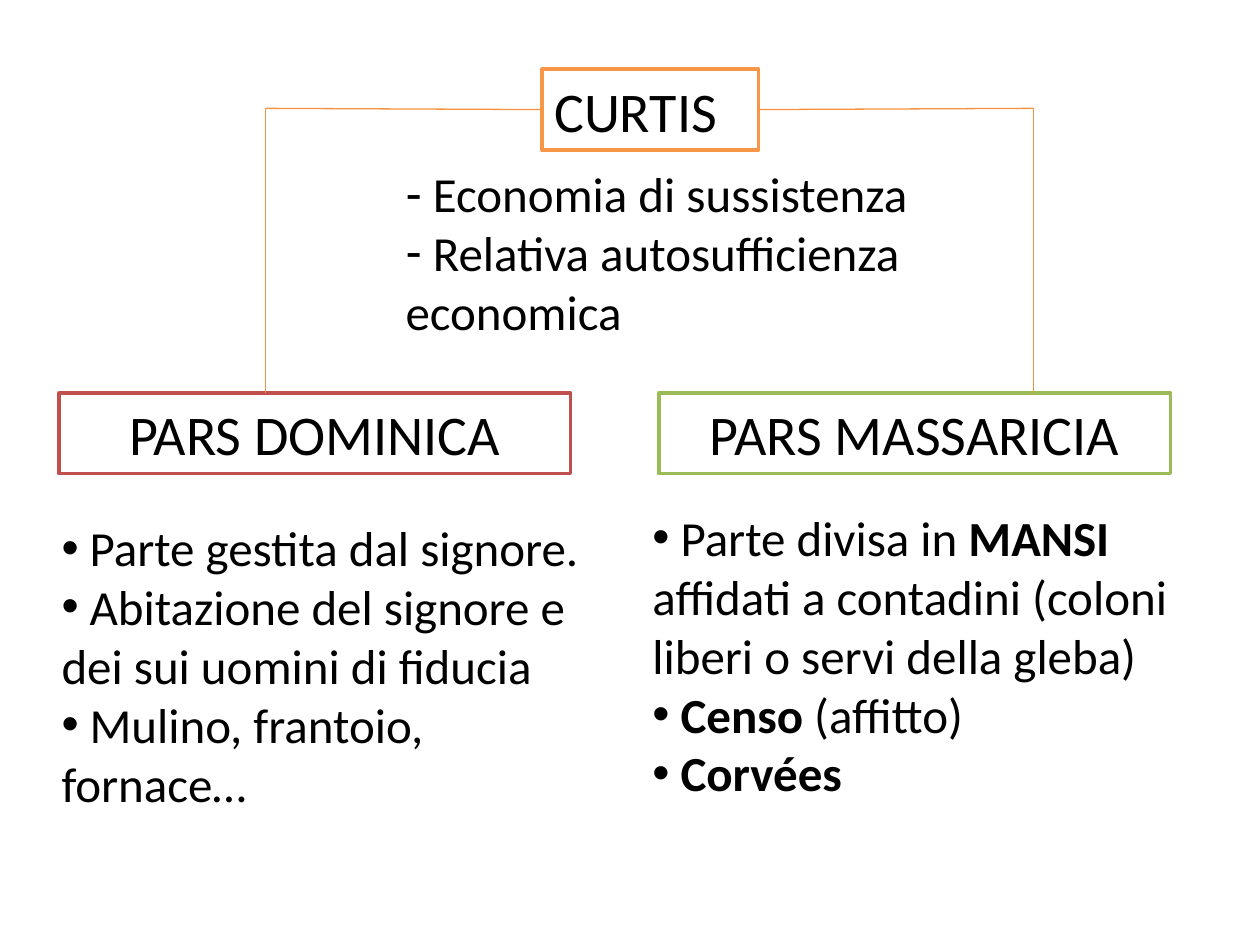
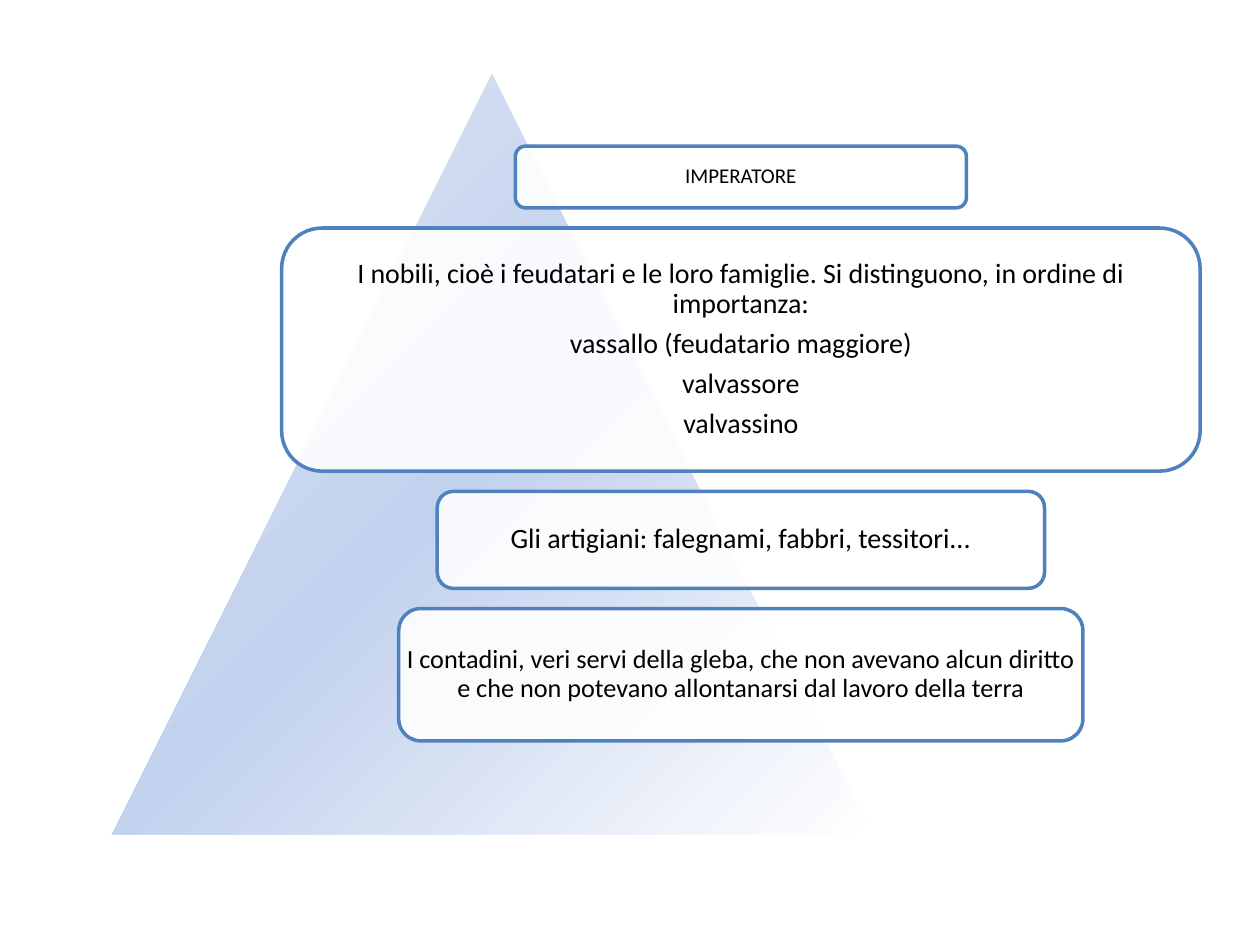
from dataclasses import dataclass

from lxml import etree
from pptx import Presentation
from pptx import util as u
from pptx.dml.color import RGBColor
from pptx.enum import shapes, text
from pptx.oxml import ns

COLUMNS, ROWS = 100, 75
BLANK_LAYOUT = 6


@dataclass(frozen=True)
class Theme:
    font: str = "Calibri"
    bullet_font: str = "Arial"
    ink: str = "000000"
    paper: str = "FFFFFF"
    orange: str = "F79646"
    branch: str = "F69240"
    red: str = "C0504D"
    green: str = "9BBB59"
    blue: str = "4F81BD"
    pyramid: tuple = ((0, "FFFFFF"), (50, "C2D1ED"), (100, "E1E8F5"))
    heading_size: int = 32
    list_size: int = 28
    outline: float = 2
    branch_width: float = 0.75


THEME = Theme()


def grid(*cells):
    """Turn grid units, a hundredth of the slide's width each, into lengths."""
    return [u.Inches(cell * 10 / COLUMNS) for cell in cells]


def add_child(parent, tag, **attributes):
    return etree.SubElement(parent, ns.qn(tag), attributes)


def add_outlined(page, kind, place, line_color):
    box = page.shapes.add_shape(kind, *grid(*place))
    box.shadow.inherit = False
    box.fill.solid()
    box.fill.fore_color.rgb = RGBColor.from_string(THEME.paper)
    box.line.color.rgb = RGBColor.from_string(line_color)
    box.line.width = u.Pt(THEME.outline)
    return box


def add_spans(para, line, size):
    """Add the runs of a line; the parts between asterisks are bold."""
    for index, part in enumerate(line.split("*")):
        if part:
            span = para.add_run()
            span.text = part
            span.font.name = THEME.font
            span.font.size = u.Pt(size)
            span.font.bold = index % 2 == 1
            span.font.color.rgb = RGBColor.from_string(THEME.ink)


def write(box, lines, size, align):
    """Fill a box with one paragraph per line and return the paragraphs."""
    frame = box.text_frame
    frame.word_wrap = True
    paras = []
    for index, line in enumerate(lines):
        para = frame.add_paragraph() if index else frame.paragraphs[0]
        para.alignment = align
        add_spans(para, line, size)
        paras.append(para)
    return paras


def add_heading(page, place, title, line_color, align=text.PP_ALIGN.CENTER):
    box = add_outlined(page, shapes.MSO_SHAPE.RECTANGLE, place, line_color)
    write(box, [title], THEME.heading_size, align)
    return box


def add_list(page, place, lines, mark="•"):
    box = page.shapes.add_textbox(*grid(*place))
    for para in write(box, lines, THEME.list_size, text.PP_ALIGN.LEFT):
        properties = para._p.get_or_add_pPr()
        add_child(properties, "a:buFont", typeface=THEME.bullet_font)
        add_child(properties, "a:buChar", char=mark)


def add_branch(page, start, end):
    branch = page.shapes.add_connector(
        shapes.MSO_CONNECTOR.STRAIGHT, *grid(*start, *end))
    branch.line.color.rgb = RGBColor.from_string(THEME.branch)
    branch.line.width = u.Pt(THEME.branch_width)
    add_child(branch._element.spPr, "a:effectLst")
    return branch


def add_pyramid(page, place):
    """Add a triangle whose radial gradient starts at the lower right."""
    pyramid = add_outlined(
        page, shapes.MSO_SHAPE.ISOSCELES_TRIANGLE, place, THEME.paper)
    solid = pyramid._element.spPr.find(ns.qn("a:solidFill"))
    gradient = etree.Element(ns.qn("a:gradFill"), rotWithShape="1")
    stops = add_child(gradient, "a:gsLst")
    for percent, color in THEME.pyramid:
        stop = add_child(stops, "a:gs", pos=str(percent * 1000))
        add_child(stop, "a:srgbClr", val=color)
    center = add_child(gradient, "a:path", path="circle")
    add_child(center, "a:fillToRect", l="100000", t="100000")
    solid.getparent().replace(solid, gradient)


def add_rank(page, place, lines, size):
    box = add_outlined(
        page, shapes.MSO_SHAPE.ROUNDED_RECTANGLE, place, THEME.blue)
    color = box._element.spPr.find(ns.qn("a:solidFill"))[0]
    add_child(color, "a:alpha", val="90000")
    frame = box.text_frame
    frame.vertical_anchor = text.MSO_ANCHOR.MIDDLE
    frame.margin_left = frame.margin_right = u.Inches(0.01)
    frame.margin_top = frame.margin_bottom = u.Inches(0.01)
    for para in write(box, lines, size, text.PP_ALIGN.CENTER):
        para.line_spacing = 0.9
        para.space_after = u.Pt(0.35 * size)


def build_curtis(page):
    root = add_heading(page, (43, 5.5, 17.2, 6.4), "CURTIS", THEME.orange,
                       text.PP_ALIGN.LEFT)
    add_list(page, (31.2, 12.5, 42.2, 15.1),
             [" Economia di sussistenza",
              " Relativa autosufficienza economica"], "-")
    part_top = 31.2
    for left, title, color in ((4.7, "PARS DOMINICA", THEME.red),
                               (52.3, "PARS MASSARICIA", THEME.green)):
        add_heading(page, (left, part_top, 40.6, 6.4), title, color)
    add_list(page, (3.9, 40.6, 43, 29.3),
             [" Parte gestita dal signore.",
              " Abitazione del signore e dei sui uomini di fiducia",
              " Mulino, frantoio, fornace…"])
    add_list(page, (50.8, 39.8, 47.7, 24.6),
             [" Parte divisa in *MANSI* affidati a contadini "
              "(coloni liberi o servi della gleba)",
              " *Censo* (affitto)",
              " *Corvées*"])
    branch_top = 8.6
    for column, root_edge, side in ((21.1, 43, 1), (82, 60.2, 3)):
        arm = add_branch(page, (column, branch_top), (root_edge, 8.7))
        arm.end_connect(root, side)
        add_branch(page, (column, branch_top), (column, part_top))


def build_society(page):
    add_pyramid(page, (8.6, 5.5, 60.9, 60.9))
    axis, top, gap = 58.8, 11.6, 1.6
    ranks = (
        (35.8, 4.9, 12, ["IMPERATORE"]),
        (72.9, 19.3, 16, [
            "I nobili, cioè i feudatari e le loro famiglie. "
            "Si distinguono, in ordine di importanza:",
            "vassallo (feudatario maggiore)", "valvassore", "valvassino"]),
        (48.2, 7.7, 16, ["Gli artigiani: falegnami, fabbri, tessitori..."]),
        (54.3, 10.5, 15, [
            "I contadini, veri servi della gleba, che non avevano alcun "
            "diritto e che non potevano allontanarsi dal lavoro della "
            "terra"]),
    )
    for width, height, size, lines in ranks:
        add_rank(page, (axis - width / 2, top, width, height), lines, size)
        top += height + gap


def main():
    deck = Presentation()
    deck.slide_width, deck.slide_height = grid(COLUMNS, ROWS)
    for build in (build_curtis, build_society):
        build(deck.slides.add_slide(deck.slide_layouts[BLANK_LAYOUT]))
    deck.save("out.pptx")


if __name__ == "__main__":
    main()
